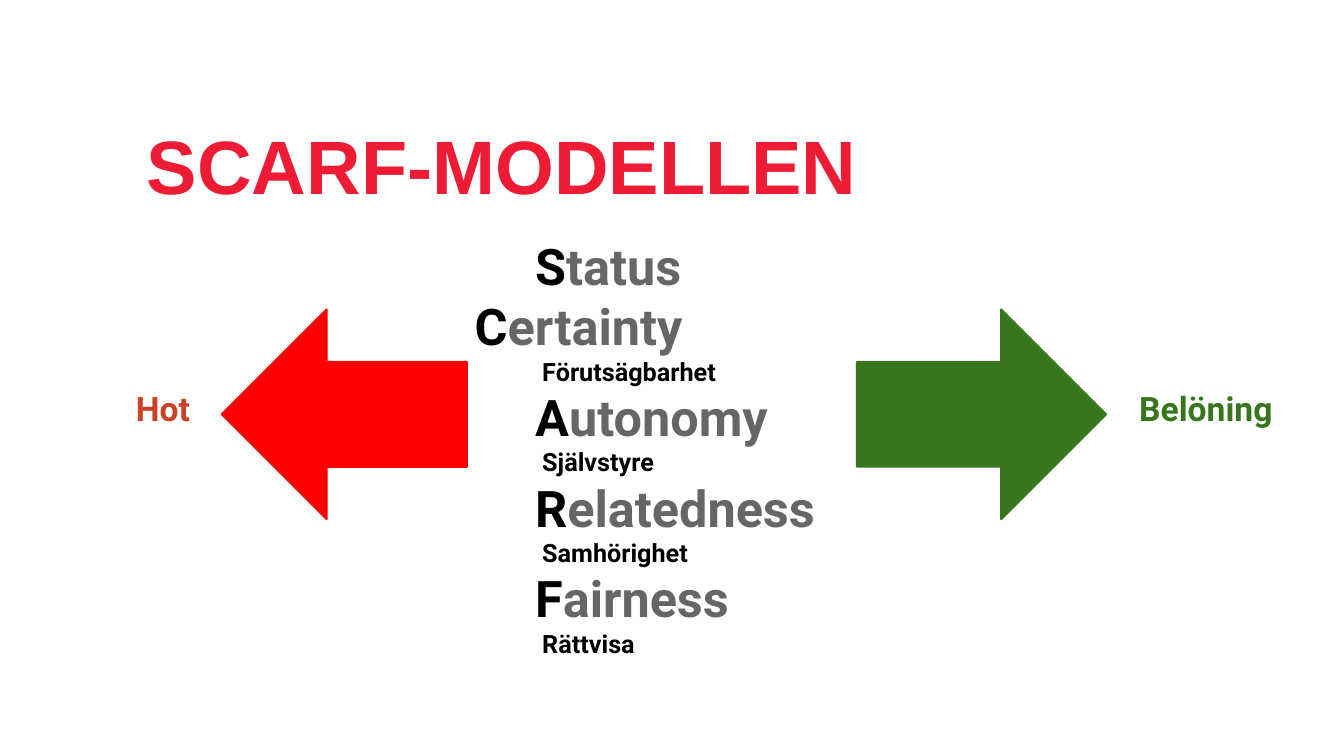
"""Build the SCARF model slide with threat and reward arrows."""
from dataclasses import dataclass

from pptx import Presentation
from pptx import util as u
from pptx.dml.color import RGBColor
from pptx.enum import shapes, text

BLACK, GREY, RED, GREEN = "000000", "666666", "FF0000", "38761D"
INSET = 0.1


@dataclass(frozen=True)
class Box:
    left: float
    top: float
    width: float
    height: float

    def lengths(self) -> list[u.Length]:
        return [u.Inches(n) for n in (self.left, self.top, self.width, self.height)]


@dataclass(frozen=True)
class Factor:
    word: str
    translation: str = ""
    indent: float = 3.33


@dataclass(frozen=True)
class Arrow:
    box: Box
    color: str
    rotation: int = 0


@dataclass(frozen=True)
class Label:
    wording: str
    box: Box
    color: str
    size: int = 24
    font: str = "Roboto"
    indent: float = 0
    line_spacing: float = 1.0
    anchor: text.MSO_ANCHOR = text.MSO_ANCHOR.TOP


FACTORS = [
    Factor("Status"),
    Factor("Certainty", "Förutsägbarhet", indent=2.73),
    Factor("Autonomy", "Självstyre"),
    Factor("Relatedness", "Samhörighet"),
    Factor("Fairness", "Rättvisa"),
]
TRANSLATION_INDENT = 3.4
ARROWS = [
    Arrow(Box(8.5, 3.07, 2.47, 2.08), GREEN),
    Arrow(Box(2.2, 3.07, 2.43, 2.08), RED, rotation=180),
]
LABELS = [
    Label("Belöning", Box(11.2, 3.75, 1.91, 0.95), GREEN),
    Label("Hot", Box(0.56, 3.75, 1.82, 0.88), "CC4125", indent=0.69),
    Label("SCARF-MODELLEN", Box(1.36, 1.19, 11.97, 1.04), "ED1B34", size=54,
          font="Arial", line_spacing=0.8, anchor=text.MSO_ANCHOR.MIDDLE),
]


def rgb(color: str) -> RGBColor:
    return RGBColor.from_string(color)


def add_frame(slide, box: Box, anchor=text.MSO_ANCHOR.TOP):
    frame = slide.shapes.add_textbox(*box.lengths()).text_frame
    frame.word_wrap = True
    frame.vertical_anchor = anchor
    frame.margin_left = frame.margin_right = u.Inches(INSET)
    frame.margin_top = frame.margin_bottom = u.Inches(INSET)
    return frame


def indent_paragraph(paragraph, indent: float) -> None:
    properties = paragraph._p.get_or_add_pPr()
    properties.set("marL", str(u.Inches(indent)))
    properties.set("indent", "0")


def add_text(paragraph, wording: str, *, size: int, color: str,
             font: str = "Roboto", bold: bool = True) -> None:
    run = paragraph.add_run()
    run.text = wording
    run.font.name = font
    run.font.size = u.Pt(size)
    run.font.bold = bold
    run.font.color.rgb = rgb(color)


def add_factors(slide) -> None:
    frame = add_frame(slide, Box(1.88, 2.23, 8.4, 4.55))
    paragraph = frame.paragraphs[0]
    for number, factor in enumerate(FACTORS):
        if number:
            paragraph = frame.add_paragraph()
        indent_paragraph(paragraph, factor.indent)
        add_text(paragraph, factor.word[0], size=36, color=BLACK)
        add_text(paragraph, factor.word[1:], size=36, color=GREY)
        if factor.translation:
            paragraph = frame.add_paragraph()
            indent_paragraph(paragraph, TRANSLATION_INDENT)
            add_text(paragraph, factor.translation, size=18, color=BLACK)


def add_arrow(slide, arrow: Arrow) -> None:
    shape = slide.shapes.add_shape(shapes.MSO_SHAPE.RIGHT_ARROW, *arrow.box.lengths())
    shape.rotation = arrow.rotation
    shape.shadow.inherit = False
    shape.fill.solid()
    shape.fill.fore_color.rgb = rgb(arrow.color)
    shape.line.color.rgb = rgb(arrow.color)
    shape.line.width = u.Pt(1.5)


def add_label(slide, label: Label) -> None:
    paragraph = add_frame(slide, label.box, label.anchor).paragraphs[0]
    indent_paragraph(paragraph, label.indent)
    paragraph.line_spacing = label.line_spacing
    add_text(paragraph, label.wording, size=label.size, color=label.color, font=label.font)


def main() -> None:
    presentation = Presentation()
    presentation.slide_width = u.Inches(13.33)
    presentation.slide_height = u.Inches(7.5)
    slide = presentation.slides.add_slide(presentation.slide_layouts[6])
    add_factors(slide)
    for arrow in ARROWS:
        add_arrow(slide, arrow)
    for label in LABELS:
        add_label(slide, label)
    presentation.save("out.pptx")


if __name__ == "__main__":
    main()
